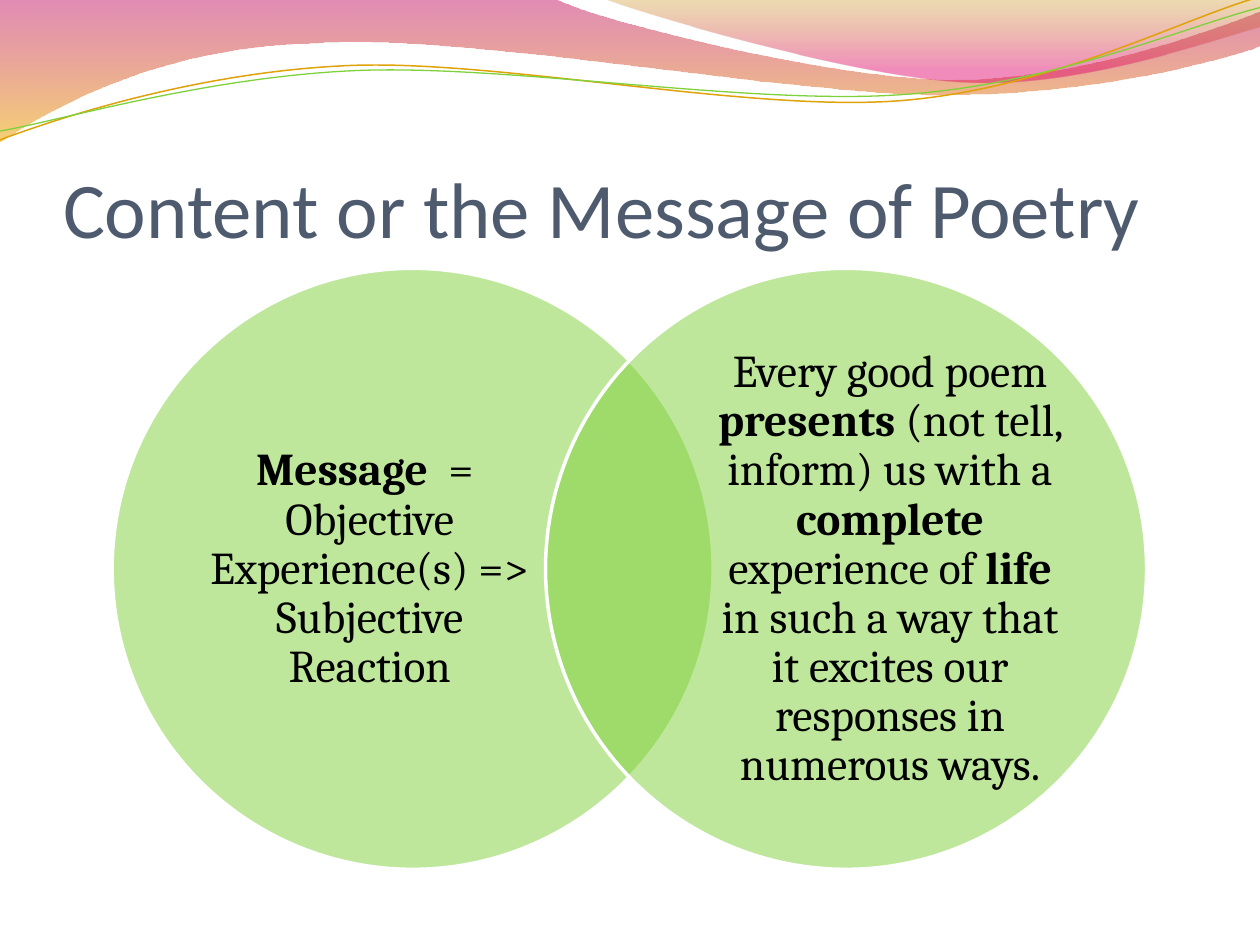
"""Build a poetry slide with a two-circle Venn diagram under a wave banner."""
from math import cos, radians, sin

from lxml.etree import SubElement
from pptx import Presentation
from pptx.dml.color import RGBColor
from pptx.enum.shapes import MSO_SHAPE
from pptx.enum.text import MSO_ANCHOR, MSO_AUTO_SIZE, PP_ALIGN
from pptx.oxml.ns import qn
from pptx.util import Inches, Pt

THEME = {
    "title_font": "Calibri", "title_size": 45, "title": "4E5B6F",
    "body_font": "Cambria", "body_size": 26, "body": "000000",
    "circle": "7FD13B", "circle_opacity": 50, "rim": "FFFFFF", "rim_width": 2,
}

TITLE = "Content or the Message of Poetry"
STATEMENTS = [
    {"text_left": 1.56, "runs": [
        ("Message", True),
        ("  =  Objective Experience(s) => Subjective Reaction", False),
    ]},
    {"text_left": 5.69, "runs": [
        ("Every good poem ", False), ("presents ", True),
        ("(not tell, inform) us with a ", False), ("complete ", True),
        ("experience of ", False), ("life ", True),
        ("in such a way that it excites our responses in numerous ways.", False),
    ]},
]

BANDS = [
    {"stops": [(0, "BD0059", 45), (1, "F0AB00", 55)], "outline": [
        (0, 0), (4.4, -0.01),
        (4.76, 0.17, 6.64, 0.63, 7.58, 0.63), (8.53, 0.63, 9.58, 0.26, 10, 0.09),
        (10.01, 0.36),
        (9.83, 0.44, 8.7, 0.76, 7.46, 0.75), (6.22, 0.75, 3.82, 0.28, 2.57, 0.34),
        (1.29, 0.36, 0.46, 0.83, -0.01, 1.13), (0, 0)]},
    {"stops": [(0, "C38B00", 30), (0.8, "E1006B", 45)], "outline": [
        (4.79, -0.01),
        (5.09, 0.11, 6.82, 0.62, 7.69, 0.65), (8.56, 0.69, 9.61, 0.32, 10, 0.21),
        (10, 0), (4.79, -0.01)]},
]
STRANDS = [
    {"color": "E0A209", "width": 0.85, "outline": [
        (0, 1.11),
        (0.48, 0.93, 1.58, 0.57, 2.77, 0.52), (3.95, 0.47, 5.93, 0.89, 7.13, 0.8),
        (8.33, 0.71, 9.38, 0.15, 9.98, -0.02)]},
    {"color": "7FD13B", "width": 0.75, "outline": [
        (0, 1.04),
        (0.47, 0.96, 1.64, 0.61, 2.83, 0.56), (4.03, 0.51, 5.97, 0.84, 7.17, 0.75),
        (8.36, 0.67, 9.41, 0.21, 10, 0.06)]},
]

STRAND_TILT, STRAND_PIVOT = 2.7, (4.99, 0.58)
CIRCLE_LEFT, CIRCLE_TOP, CIRCLE_SIZE, CIRCLE_PITCH = 0.89, 2.13, 4.77, 3.44
TEXT_TOP, TEXT_WIDTH, TEXT_HEIGHT = 2.69, 2.75, 3.66


def rgb(name):
    return RGBColor.from_string(name)


def set_opacity(fill_element, percents):
    for color, percent in zip(fill_element.iter(qn("a:srgbClr")), percents):
        SubElement(color, qn("a:alpha")).set("val", str(percent * 1000))


def turn(point, degrees):
    pivot_x, pivot_y = STRAND_PIVOT
    x, y = point[0] - pivot_x, point[1] - pivot_y
    c, s = cos(radians(degrees)), sin(radians(degrees))
    return pivot_x + x * c - y * s, pivot_y + x * s + y * c


def add_outline(slide, outline, close, tilt=0):
    points = [turn(pair, tilt) for segment in outline
              for pair in zip(segment[::2], segment[1::2])]
    start, *rest = [(Inches(x), Inches(y)) for x, y in points]
    builder = slide.shapes.build_freeform(*start)
    builder.add_line_segments(rest, close=close)
    wave = builder.convert_to_shape()
    wave.shadow.inherit = False
    wave.rotation = -tilt % 360
    steps = iter(list(wave._element.iter(qn("a:lnTo"))))
    for segment in outline[1:]:
        step = next(steps)
        if len(segment) == 6:
            curve = step.makeelement(qn("a:cubicBezTo"))
            step.addprevious(curve)
            for line in (step, next(steps), next(steps)):
                curve.append(line[0])
                line.getparent().remove(line)
    return wave


def add_band(slide, band):
    wave = add_outline(slide, band["outline"], True)
    wave.line.fill.background()
    wave.fill.gradient()
    wave.fill.gradient_angle = 270
    for stop, (position, color, _) in zip(wave.fill.gradient_stops, band["stops"]):
        stop.position = position
        stop.color.rgb = rgb(color)
    set_opacity(wave._element.spPr, [opacity for _, _, opacity in band["stops"]])


def add_strand(slide, strand):
    wave = add_outline(slide, strand["outline"], False, STRAND_TILT)
    wave.fill.background()
    wave.line.color.rgb = rgb(strand["color"])
    wave.line.width = Pt(strand["width"])


def set_frame(frame, anchor, top_inset=0):
    frame.word_wrap = True
    frame.auto_size = MSO_AUTO_SIZE.NONE
    frame.vertical_anchor = anchor
    frame.margin_left = frame.margin_right = frame.margin_bottom = 0
    frame.margin_top = Inches(top_inset)


def set_font(paragraph, role):
    paragraph.font.name = THEME[f"{role}_font"]
    paragraph.font.size = Pt(THEME[f"{role}_size"])
    paragraph.font.color.rgb = rgb(THEME[role])


def add_title(slide):
    title = slide.shapes.title
    title.left, title.top, title.width, title.height = map(Inches, (0.5, 0.77, 9, 1.25))
    title.text_frame.text = TITLE
    set_frame(title.text_frame, MSO_ANCHOR.BOTTOM, 0.05)
    heading = title.text_frame.paragraphs[0]
    heading.alignment = PP_ALIGN.LEFT
    set_font(heading, "title")


def add_statement(slide, index, statement):
    circle = slide.shapes.add_shape(
        MSO_SHAPE.OVAL, Inches(CIRCLE_LEFT + index * CIRCLE_PITCH), Inches(CIRCLE_TOP),
        Inches(CIRCLE_SIZE), Inches(CIRCLE_SIZE))
    circle.shadow.inherit = False
    circle.fill.solid()
    circle.fill.fore_color.rgb = rgb(THEME["circle"])
    set_opacity(circle._element.spPr, [THEME["circle_opacity"]])
    circle.line.color.rgb = rgb(THEME["rim"])
    circle.line.width = Pt(THEME["rim_width"])

    label = slide.shapes.add_textbox(
        Inches(statement["text_left"]), Inches(TEXT_TOP),
        Inches(TEXT_WIDTH), Inches(TEXT_HEIGHT))
    set_frame(label.text_frame, MSO_ANCHOR.MIDDLE)
    sentence = label.text_frame.paragraphs[0]
    sentence.alignment = PP_ALIGN.CENTER
    sentence.line_spacing = 0.9
    set_font(sentence, "body")
    for words, bold in statement["runs"]:
        run = sentence.add_run()
        run.text = words
        run.font.bold = bold


def main():
    deck = Presentation()
    deck.slide_width, deck.slide_height = Inches(10), Inches(7.5)
    slide = deck.slides.add_slide(deck.slide_layouts.get_by_name("Title Only"))
    for band in BANDS:
        add_band(slide, band)
    for strand in STRANDS:
        add_strand(slide, strand)
    add_title(slide)
    for index, statement in enumerate(STATEMENTS):
        add_statement(slide, index, statement)
    deck.save("out.pptx")


if __name__ == "__main__":
    main()
